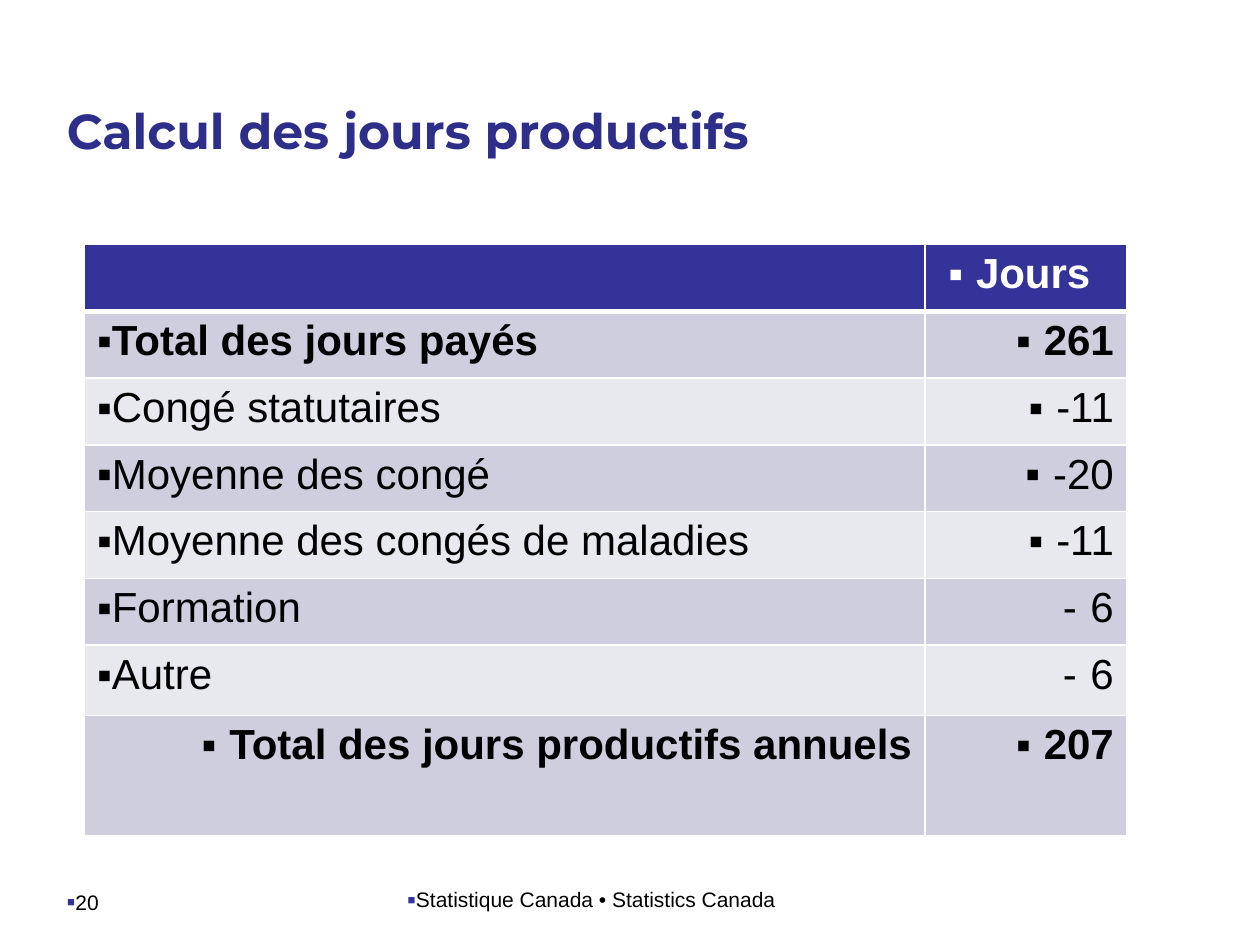
from lxml import etree
from pptx import Presentation
from pptx import util as u
from pptx.dml.color import RGBColor
from pptx.enum import text
from pptx.oxml.ns import qn

BLACK = RGBColor(0x00, 0x00, 0x00)
WHITE = RGBColor(0xFF, 0xFF, 0xFF)
INDIGO = RGBColor(0x2D, 0x2D, 0x8A)
BLUE = RGBColor(0x33, 0x33, 0x99)
BAND_DARK = RGBColor(0xCE, 0xCE, 0xDE)
BAND_LIGHT = RGBColor(0xE8, 0xE8, 0xEF)

LEFT, CENTER, RIGHT = (text.PP_ALIGN.LEFT, text.PP_ALIGN.CENTER,
                       text.PP_ALIGN.RIGHT)
SQUARE = "▪"
HANGING = 0.22


class Deck:
    """Holds the style and the slide being filled."""

    body = {"name": "Arial", "size": u.Pt(24), "bold": False}
    small = {"name": "Arial", "size": u.Pt(12), "bold": False}
    heading = {"name": "Montserrat", "size": u.Pt(28), "bold": True}

    def __init__(self, width, height):
        self.prs = Presentation()
        self.prs.slide_width = u.Inches(width)
        self.prs.slide_height = u.Inches(height)
        self.s = self.prs.slides.add_slide(self.prs.slide_layouts[5])

    def place(self, sp, box):
        for name, value in zip(("left", "top", "width", "height"), box):
            setattr(sp, name, u.Inches(value))

    def bullet(self, p, char, color=None, size=None, hanging=0):
        pPr = p._p.get_or_add_pPr()
        pPr.set("marL", str(u.Inches(hanging)))
        pPr.set("indent", str(-u.Inches(hanging)))
        if color is not None:
            clr = etree.SubElement(pPr, qn("a:buClr"))
            etree.SubElement(clr, qn("a:srgbClr"), val=str(color))
        if size:
            etree.SubElement(pPr, qn("a:buSzPct"), val=str(size * 1000))
        etree.SubElement(pPr, qn("a:buFont"), typeface="Arial")
        etree.SubElement(pPr, qn("a:buChar"), char=char)

    def add_text(self, p, words, style, color, align=LEFT):
        p.alignment = align
        r = p.add_run()
        r.text = words
        for name, value in style.items():
            setattr(r.font, name, value)
        r.font.color.rgb = color

    def title(self, words, box):
        sp = self.s.shapes.title
        self.place(sp, box)
        tf = sp.text_frame
        tf.word_wrap = True
        tf.vertical_anchor = text.MSO_ANCHOR.MIDDLE
        self.add_text(tf.paragraphs[0], words, self.heading, INDIGO)

    def footer(self, words, box, align=LEFT):
        sp = self.s.shapes.add_textbox(*map(u.Inches, box))
        tf = sp.text_frame
        tf.word_wrap = True
        p = tf.paragraphs[0]
        self.bullet(p, SQUARE, BLUE, 120)
        self.add_text(p, words, self.small, BLACK, align)

    def borders(self, cell, **widths):
        """Draw white cell borders; widths are in points, by side."""
        tcPr = cell._tc.get_or_add_tcPr()
        for i, side in enumerate(("L", "R", "T", "B")):
            ln = etree.Element(qn(f"a:ln{side}"),
                               w=str(u.Pt(widths.get(side, 1))))
            fill = etree.SubElement(ln, qn("a:solidFill"))
            etree.SubElement(fill, qn("a:srgbClr"), val=str(WHITE))
            tcPr.insert(i, ln)

    def cell(self, cell, words, fill, color, align, bold, char=SQUARE):
        cell.fill.solid()
        cell.fill.fore_color.rgb = fill
        if words:
            p = cell.text_frame.paragraphs[0]
            self.bullet(p, char, hanging=0 if align == LEFT else HANGING)
            self.add_text(p, words, {**self.body, "bold": bold}, color, align)

    def table(self, rows, at, widths, heights):
        frame = self.s.shapes.add_table(
            len(rows), len(widths),
            *map(u.Inches, (*at, sum(widths), sum(heights))))
        table = frame.table
        for col, width in zip(table.columns, widths):
            col.width = u.Inches(width)
        for row, height in zip(table.rows, heights):
            row.height = u.Inches(height)

        last = len(rows) - 1
        for i, (label, days, char) in enumerate(rows):
            name, value = table.cell(i, 0), table.cell(i, 1)
            header = i == 0
            fill = BLUE if header else BAND_DARK if i % 2 else BAND_LIGHT
            color = WHITE if header else BLACK
            bold = i in (0, 1, last)
            self.cell(name, label, fill, color,
                      RIGHT if i == last else LEFT, bold)
            self.cell(value, days, fill, color,
                      CENTER if header else RIGHT, bold, char)
            for c in (name, value):
                self.borders(c, T=3 if i == 1 else 1, B=3 if header else 1)
        table.cell(0, 1).margin_right = u.Inches(0.2)


ROWS = [
    ("", "Jours", SQUARE),
    ("Total des jours payés", "261", SQUARE),
    ("Congé statutaires", "-11", SQUARE),
    ("Moyenne des congé", "-20", SQUARE),
    ("Moyenne des congés de maladies", "-11", SQUARE),
    ("Formation", "6", "-"),
    ("Autre", "6", "-"),
    ("Total des jours productifs annuels", "207", SQUARE),
]


def main():
    deck = Deck(10, 7.5)
    deck.title("Calcul des jours productifs", (0.43, 0.52, 9.37, 1.02))
    deck.table(ROWS, (0.67, 1.94), (6.67, 1.6), [0.53] * 6 + [0.56, 0.95])
    deck.footer("Statistique Canada • Statistics Canada",
                (3.11, 6.99, 3.17, 0.52), CENTER)
    deck.footer("20", (0.43, 7.01, 1.66, 0.52))
    deck.prs.save("out.pptx")


if __name__ == "__main__":
    main()
